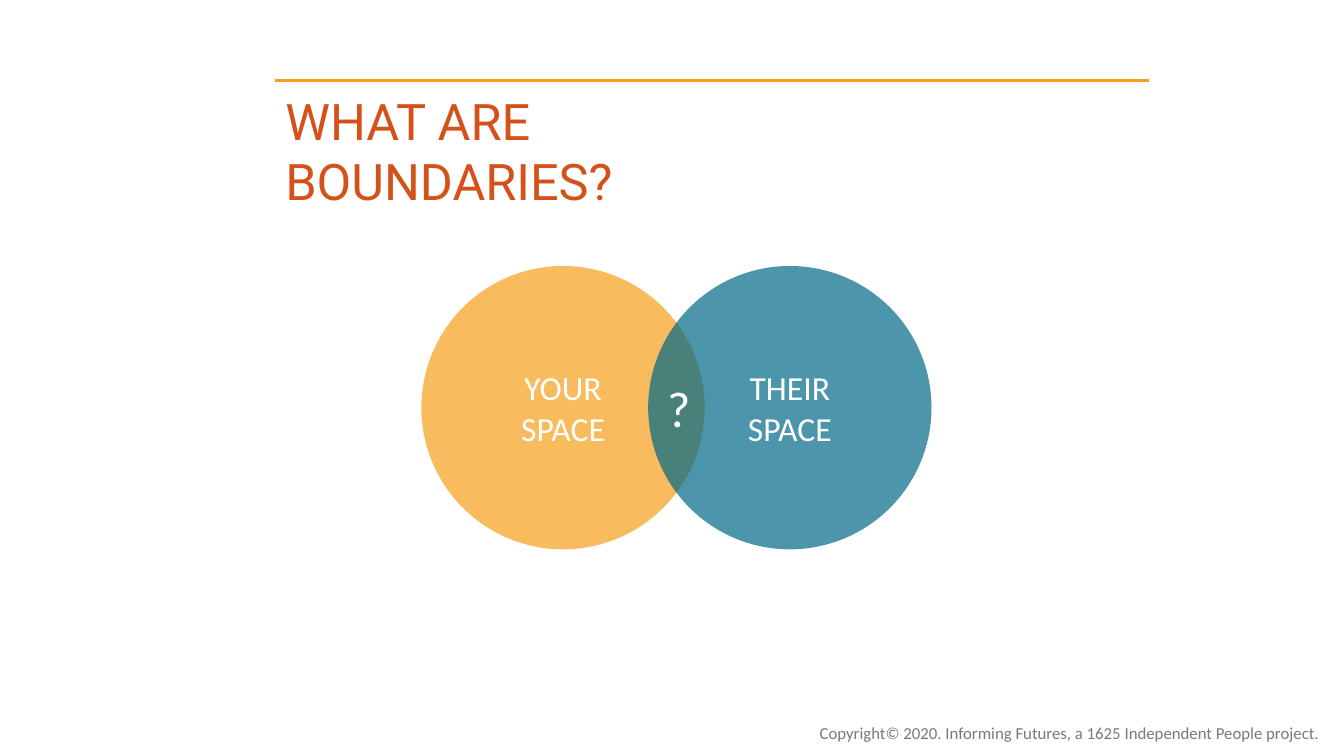
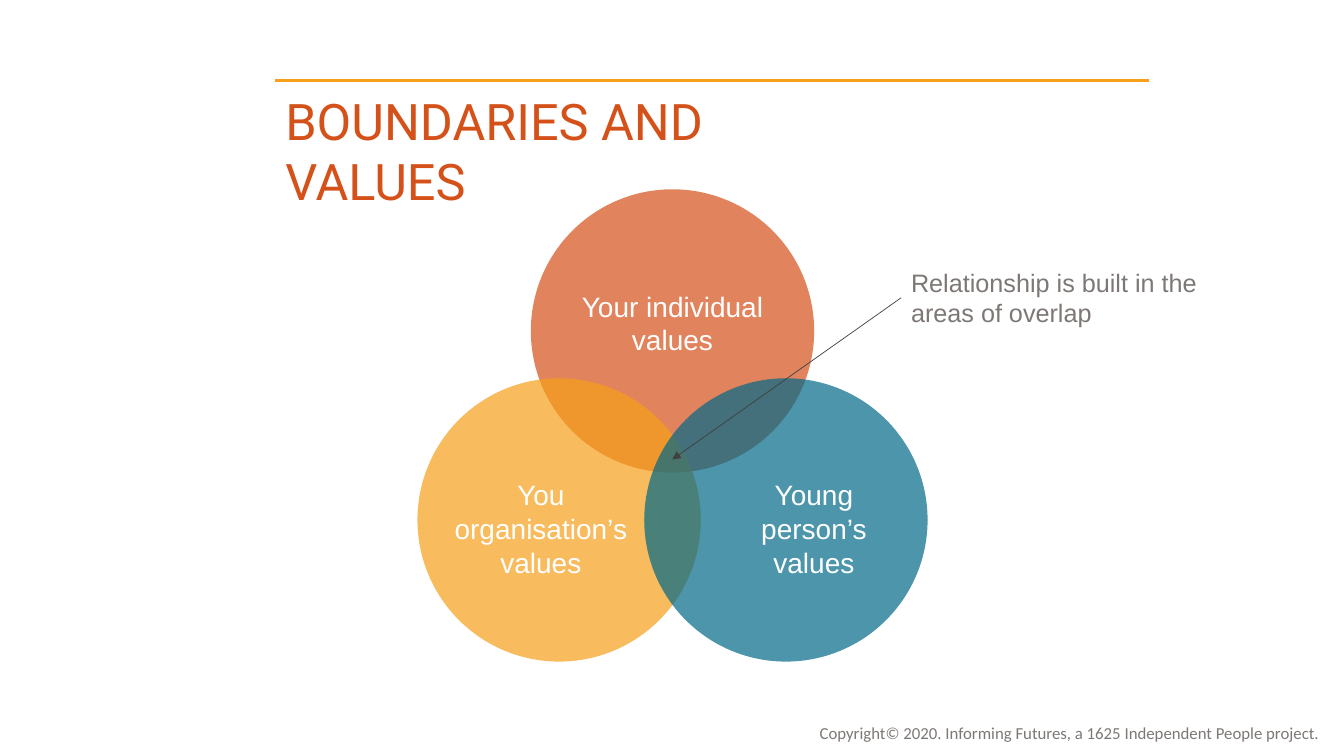
from lxml.etree import SubElement
from pptx import Presentation
from pptx.dml.color import RGBColor
from pptx.enum.shapes import MSO_CONNECTOR as Connector, MSO_SHAPE as Shape
from pptx.enum.text import MSO_ANCHOR as Anchor, MSO_AUTO_SIZE as AutoSize, PP_ALIGN as Align
from pptx.oxml.ns import qn
from pptx.util import Pt

RUST, AMBER, TEAL = "D5511A", "F69F19", "006886"
GREY, DARK, WHITE = "7D7875", "404040", "FFFFFF"
OPACITY = 70
DIAMETER = 202.4
STEP_X, STEP_Y = 162, 135
FRAME_LEFT = 196.6


def color(hex_value):
    return RGBColor.from_string(hex_value)


def write(frame, lines, font, size, tint, align=Align.LEFT):
    frame.text = "\n".join(lines)
    for paragraph in frame.paragraphs:
        paragraph.alignment = align
        paragraph.font.name = font
        paragraph.font.size = Pt(size)
        paragraph.font.color.rgb = color(tint)


def add_label(slide, box, text, font, size, tint, align=Align.LEFT, wrap=True):
    label = slide.shapes.add_textbox(*map(Pt, box))
    label.text_frame.word_wrap = wrap
    write(label.text_frame, [text], font, size, tint, align)
    return label


def add_line(slide, start, end, tint, width):
    line = slide.shapes.add_connector(Connector.STRAIGHT, *map(Pt, start + end))
    line.line.color.rgb = color(tint)
    line.line.width = Pt(width)
    SubElement(line._element.spPr, qn("a:effectLst"))
    return line


def add_circle(slide, left, top, tint, lines=()):
    circle = slide.shapes.add_shape(Shape.OVAL, *map(Pt, (left, top, DIAMETER, DIAMETER)))
    circle.shadow.inherit = False
    circle.fill.solid()
    circle.fill.fore_color.rgb = color(tint)
    srgb = circle._element.spPr.find(".//" + qn("a:srgbClr"))
    SubElement(srgb, qn("a:alpha"), val=str(OPACITY * 1000))
    circle.line.fill.background()
    if lines:
        circle.text_frame.vertical_anchor = Anchor.MIDDLE
        write(circle.text_frame, lines, "Calibri", 24, WHITE, Align.CENTER)


def add_framed_slide(deck, heading):
    slide = deck.slides.add_slide(deck.slide_layouts[5])
    title = slide.shapes.title
    title.left, title.top, title.width, title.height = map(Pt, (FRAME_LEFT, 60.5, 367, 94))
    title.text_frame.auto_size = AutoSize.NONE
    title.text_frame.word_wrap = True
    title.text_frame.vertical_anchor = Anchor.TOP
    write(title.text_frame, [heading], "Roboto", 36, RUST)
    add_line(slide, (FRAME_LEFT, 57.4), (820.8, 57.4), AMBER, 2.25)
    add_label(slide, (499.7, 512.6, 450, 21.6),
              "Copyright© 2020. Informing Futures, a 1625 Independent People project.",
              "Calibri", 12, GREY, Align.RIGHT)
    return slide


def add_space_venn(slide, left, top):
    spaces = [(AMBER, "YOUR"), (TEAL, "THEIR")]
    for index, (tint, owner) in enumerate(spaces):
        add_circle(slide, left + index * STEP_X, top, tint, [owner, "SPACE"])
    add_label(slide, (left + 168.4, top + 75.7, 31.7, 51), "?", "Calibri", 36, WHITE, wrap=False)


def add_values_venn(slide, left, top):
    values = [
        (STEP_X / 2, 0, RUST, "Your individual\vvalues", 0, -5.8, 55.4),
        (0, STEP_Y, AMBER, "You\vorganisation’s\vvalues", -13, 6.5, 80),
        (STEP_X, STEP_Y, TEAL, "Young\vperson’s\vvalues", 20, 6.5, 80),
    ]
    for x, y, tint, *_ in values:
        add_circle(slide, left + x, top + y, tint)
    label_width = 150
    for x, y, _, text, shift_x, shift_y, height in values:
        label_left = left + x + (DIAMETER - label_width) / 2 + shift_x
        label_top = top + y + (DIAMETER - height) / 2 + shift_y
        add_label(slide, (label_left, label_top, label_width, height),
                  text, "Arial", 20, WHITE, Align.CENTER, wrap=False)
    callout = add_label(slide, (left + 345.5, top + 52, 252, 51),
                        "Relationship is built in the areas of overlap", "Arial", 18, GREY)
    arrow = add_line(slide, (left + 345.5, top + 77.5), (left + 182, top + 193), DARK, 0.5)
    arrow.begin_connect(callout, 1)
    SubElement(arrow.line._get_or_add_ln(), qn("a:tailEnd"), type="triangle")


def main():
    deck = Presentation()
    deck.slide_width, deck.slide_height = Pt(960), Pt(540)
    add_space_venn(add_framed_slide(deck, "WHAT ARE BOUNDARIES?"), 301, 190)
    add_values_venn(add_framed_slide(deck, "BOUNDARIES AND VALUES"), 298.2, 135.2)
    deck.save("out.pptx")


if __name__ == "__main__":
    main()
